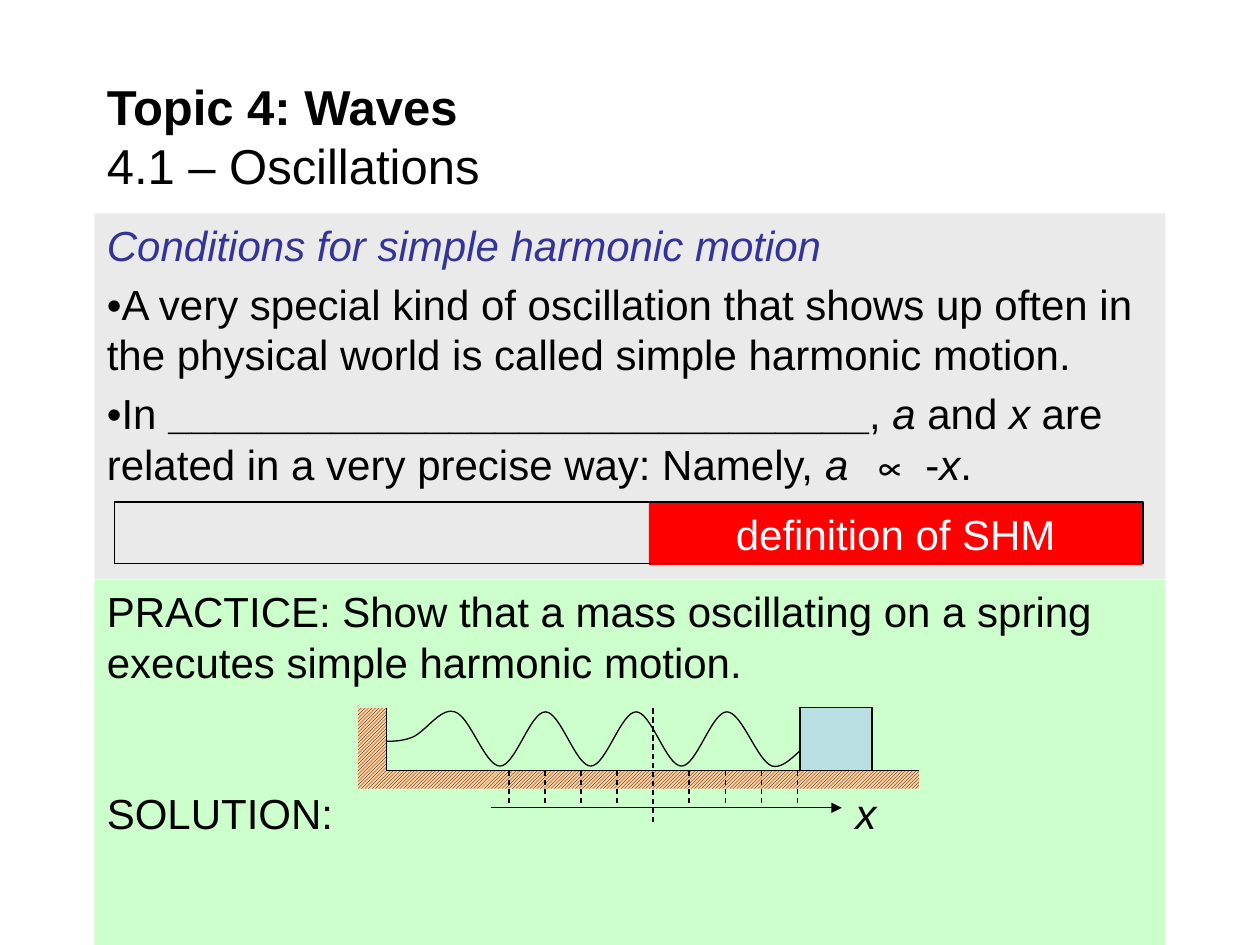
from dataclasses import dataclass
from typing import NamedTuple

from lxml.etree import SubElement
from pptx import Presentation
from pptx.dml.color import RGBColor
from pptx.enum.dml import MSO_LINE, MSO_PATTERN
from pptx.enum.shapes import MSO_CONNECTOR, MSO_SHAPE
from pptx.enum.text import MSO_ANCHOR, PP_ALIGN
from pptx.oxml.ns import qn
from pptx.util import Pt


@dataclass(frozen=True)
class Theme:
    font: str = "Arial"
    body: float = 24
    title: float = 28
    thin: float = 0.75
    edge: float = 1
    ink: str = "000000"
    white: str = "FFFFFF"
    head: str = "333399"
    gray: str = "EAEAEA"
    green: str = "CCFFCC"
    red: str = "FF0000"
    block: str = "BBE0E3"
    wall: str = "FFCC99"


class Run(NamedTuple):
    text: str
    bold: bool = False
    italic: bool = False
    color: str = ""


class Para(NamedTuple):
    runs: list[Run]
    before: float = 0


class Box(NamedTuple):
    left: float
    top: float
    width: float
    height: float


class Line(NamedTuple):
    x1: float
    y1: float
    x2: float
    y2: float
    dash: bool = False
    arrow: bool = False


THEME = Theme()
GAP = 4.8
BREAK = Run("\n")

TITLE = [Para([Run("Topic 4: Waves", bold=True), BREAK, Run("4.1 – Oscillations")])]
NOTES = [
    Para([Run("Conditions for simple harmonic motion", italic=True, color=THEME.head)], GAP),
    Para([Run("•A very special kind of oscillation that shows up often in "
              "the physical world is called simple harmonic motion.")], GAP),
    Para([Run("•In "), Run("_" * 30, bold=True), Run(", "), Run("a", italic=True),
          Run(" and "), Run("x", italic=True),
          Run(" are related in a very precise way: Namely, "),
          Run("a ", italic=True), Run(" ∝ -"), Run("x", italic=True), Run(".")], GAP),
]
TASK = [
    Para([Run("PRACTICE: Show that a mass oscillating on a spring "
              "executes simple harmonic motion.")]),
    Para([Run("SOLUTION:")], 57.6),
]

# Axis of the spring drawing
MID, STEP = 373.2, 20.6
FLOOR, AXIS = 440.6, 461.6
LINES = [
    Line(MID, 404.8, MID, 471.6, dash=True),
    Line(280.8, AXIS, 481, AXIS, arrow=True),
    *(Line(MID + i * STEP, FLOOR, MID + i * STEP, AXIS, dash=True)
      for i in range(-4, 5) if i),
]
WALL = [(525.2, 450.7), (525.2, FLOOR), (221, FLOOR), (221, 404.6),
        (204.5, 404.6), (204.5, 450.7)]
CORNER = [(221, 404.6), (221, FLOOR - 0.4), (525.2, FLOOR - 0.4)]

# Heights of the spring: each bend has two controls and an end
HIGH, LOW, REST = 406.8, 437.8, 421.9
DOWN, UP = (HIGH, LOW, LOW), (LOW, HIGH, HIGH)
BENDS = [(423.4, 424.8, REST), (419.8, 403.9, HIGH), (409, LOW, LOW),
         *[UP, DOWN] * 2, UP, (HIGH, 434.9, LOW), (439.9, 424.8, REST),
         (419.8, 420.5, REST)]


def rgb(code: str) -> RGBColor:
    return RGBColor.from_string(code)


def write(frame, paras: list[Para], size: float, color: str = THEME.ink,
          align=PP_ALIGN.LEFT, anchor=MSO_ANCHOR.TOP, wrap: bool = True) -> None:
    frame.word_wrap = wrap
    frame.vertical_anchor = anchor
    for i, para in enumerate(paras):
        p = frame.add_paragraph() if i else frame.paragraphs[0]
        p.alignment = align
        p.space_before = Pt(para.before)
        for run in para.runs:
            if run is BREAK:
                p.add_line_break()
                continue
            r = p.add_run()
            r.text = run.text
            look = {"name": THEME.font, "size": Pt(size),
                    "bold": run.bold, "italic": run.italic}
            for key, value in look.items():
                setattr(r.font, key, value)
            r.font.color.rgb = rgb(run.color or color)


def paint(shape, fill: str = "", line: float = 0) -> None:
    shape.shadow.inherit = False
    if fill:
        shape.fill.solid()
        shape.fill.fore_color.rgb = rgb(fill)
    else:
        shape.fill.background()
    if line:
        shape.line.color.rgb = rgb(THEME.ink)
        shape.line.width = Pt(line)
    else:
        shape.line.fill.background()


def add_rect(shapes, box: Box, fill: str = "", line: float = 0):
    rect = shapes.add_shape(MSO_SHAPE.RECTANGLE, *map(Pt, box))
    paint(rect, fill, line)
    return rect


def add_text(shapes, box: Box, paras: list[Para], size: float, **look) -> None:
    write(shapes.add_textbox(*map(Pt, box)).text_frame, paras, size, **look)


def add_path(shapes, dots: list[tuple[float, float]], line: float = 0, close: bool = False):
    (x, y), *rest = dots
    pen = shapes.build_freeform(Pt(x), Pt(y))
    pen.add_line_segments([(Pt(a), Pt(b)) for a, b in rest], close=close)
    shape = pen.convert_to_shape()
    paint(shape, line=line)
    return shape


def add_spring(shapes, left: float, step: float) -> None:
    """Lay out controls and ends, then join each three into a cubic bend."""
    heights = [REST, *(y for bend in BENDS for y in bend)]
    dots = [(left + i * step / 3, y) for i, y in enumerate(heights)]
    shape = add_path(shapes, dots, THEME.thin)
    track = next(shape._element.iter(qn("a:path")))
    legs = track.findall(qn("a:lnTo"))
    for i in range(0, len(legs), 3):
        bend = SubElement(track, qn("a:cubicBezTo"))
        for leg in legs[i:i + 3]:
            bend.append(leg[0])
            track.remove(leg)


def add_line(shapes, line: Line) -> None:
    ends = map(Pt, (line.x1, line.y1, line.x2, line.y2))
    rule = shapes.add_connector(MSO_CONNECTOR.STRAIGHT, *ends)
    rule.line.color.rgb = rgb(THEME.ink)
    rule.line.width = Pt(THEME.thin)
    if line.dash:
        rule.line.dash_style = MSO_LINE.DASH
    if line.arrow:
        SubElement(rule.line._get_or_add_ln(), qn("a:tailEnd")).set("type", "triangle")
    SubElement(rule._element.spPr, qn("a:effectLst"))


def main() -> None:
    deck = Presentation()
    deck.slide_width, deck.slide_height = Pt(720), Pt(540)
    shapes = deck.slides.add_slide(deck.slide_layouts[6]).shapes

    task = add_rect(shapes, Box(54, 331.2, 612, 208.8), THEME.green)
    write(task.text_frame, TASK, THEME.body)
    notes = add_rect(shapes, Box(54, 122, 612, 208.8), THEME.gray)
    write(notes.text_frame, NOTES, THEME.body)
    add_text(shapes, Box(54, 42, 612, 70.6), TITLE, THEME.title, anchor=MSO_ANCHOR.MIDDLE)

    label = add_rect(shapes, Box(370.8, 286.8, 282.2, 36), THEME.red)
    write(label.text_frame, [Para([Run("definition of SHM")])], THEME.body,
          color=THEME.white, align=PP_ALIGN.CENTER)
    add_rect(shapes, Box(65.5, 286.8, 587.5, 35.3), line=THEME.edge)

    add_spring(shapes, 208, 25.92)
    add_rect(shapes, Box(457.2, 404.2, 41.2, 36), THEME.block, THEME.thin)
    wall = add_path(shapes, WALL, close=True)
    wall.fill.patterned()
    wall.fill.pattern = MSO_PATTERN.LIGHT_UPWARD_DIAGONAL
    wall.fill.fore_color.rgb = rgb(THEME.ink)
    wall.fill.back_color.rgb = rgb(THEME.wall)
    for line in LINES:
        add_line(shapes, line)
    add_text(shapes, Box(481.7, 446.4, 26.6, 36), [Para([Run("x", italic=True)])],
             THEME.body, wrap=False)
    add_path(shapes, CORNER, THEME.thin)

    deck.save("out.pptx")


if __name__ == "__main__":
    main()
